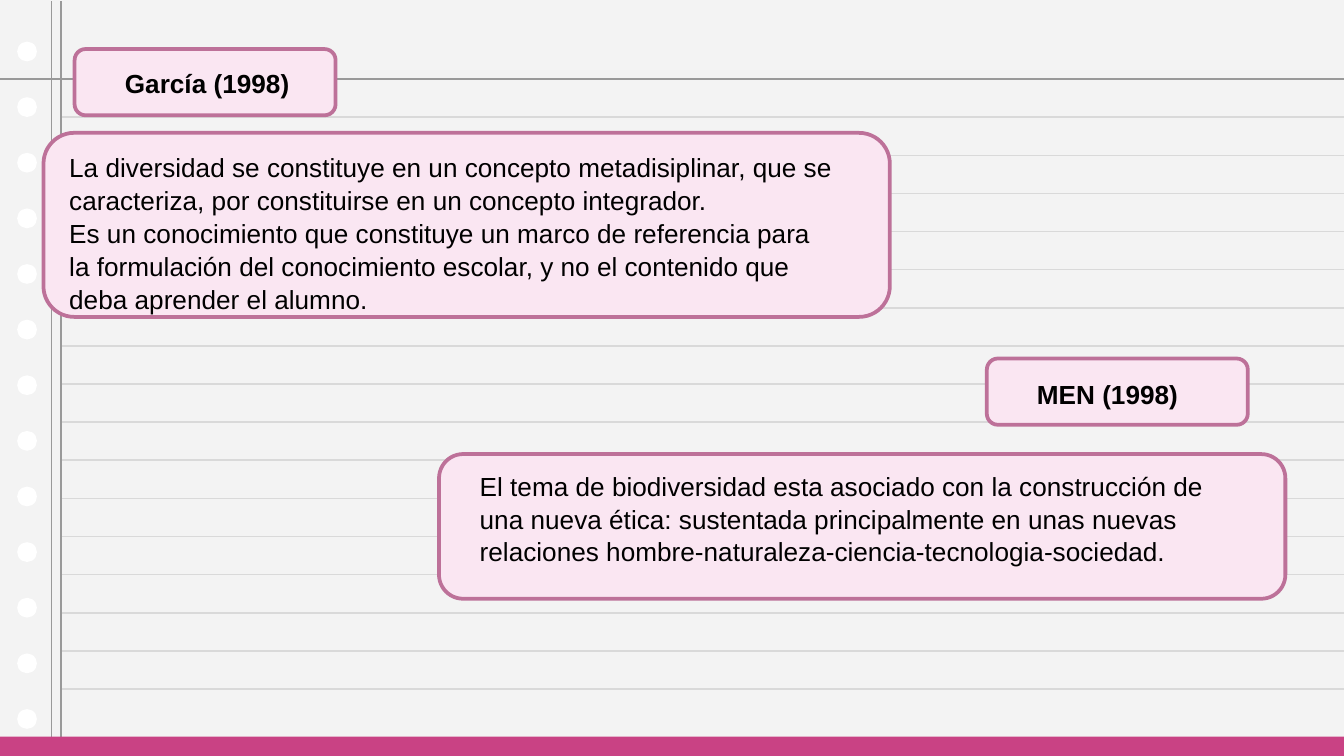
"""Build a notebook-style slide with two authors and their views on diversity."""
from dataclasses import dataclass

from lxml import etree
from pptx import Presentation
from pptx.dml.color import RGBColor
from pptx.enum.shapes import MSO_CONNECTOR, MSO_SHAPE
from pptx.oxml.ns import qn
from pptx.util import Pt

RECT = MSO_SHAPE.RECTANGLE
ROUND = MSO_SHAPE.ROUNDED_RECTANGLE
OVAL = MSO_SHAPE.OVAL
STRAIGHT = MSO_CONNECTOR.STRAIGHT

PAPER = RGBColor(0xF3, 0xF3, 0xF3)
WHITE = RGBColor(0xFF, 0xFF, 0xFF)
BLACK = RGBColor(0x00, 0x00, 0x00)
RULE = RGBColor(0xD9, 0xD9, 0xD9)
MARGIN = RGBColor(0x99, 0x99, 0x99)
BAR = RGBColor(0xC9, 0x42, 0x84)
BLUSH = RGBColor(0xFA, 0xE6, 0xF2)
MAUVE = RGBColor(0xBD, 0x71, 0x99)

WIDTH, HEIGHT = 720, 405
RULES, RULE_TOP, RULE_GAP = 16, 62.8, 20.42
HOLES, HOLE_TOP, HOLE_GAP, HOLE_SIZE = 13, 22.3, 29.8, 10.6
LEFT = 32.7


@dataclass
class Box:
    left: float
    top: float
    width: float
    height: float

    def points(self) -> tuple:
        return Pt(self.left), Pt(self.top), Pt(self.width), Pt(self.height)


@dataclass
class Note:
    card: Box
    area: Box
    lines: list[str]
    bold: bool = False


NOTES = [
    Note(Box(40, 26.3, 139.8, 35.5), Box(59.8, 31.8, 120, 24.2),
         ["García (1998)"], True),
    Note(Box(23.3, 71.2, 453.4, 98.6), Box(30, 77, 425.5, 108.5),
         ["La diversidad se constituye en un concepto metadisiplinar, que se "
          "caracteriza, por constituirse en un concepto integrador.",
          "Es un conocimiento que constituye un marco de referencia para la "
          "formulación del conocimiento escolar, y no el contenido que deba "
          "aprender el alumno."]),
    Note(Box(528.7, 192.1, 139.8, 35.5), Box(548.4, 198.5, 120, 24.2),
         ["MEN (1998)"], True),
    Note(Box(235.2, 243.3, 453.4, 77.5), Box(249.9, 247.4, 425.5, 58.2),
         ["El tema de biodiversidad esta asociado con la construcción de una "
          "nueva ética: sustentada principalmente en unas nuevas relaciones "
          "hombre-naturaleza-ciencia-tecnologia-sociedad."]),
]


def draw_shape(shapes, kind, box: Box, fill: RGBColor, edge: RGBColor | None = None) -> None:
    shape = shapes.add_shape(kind, *box.points())
    shape.shadow.inherit = False
    shape.fill.solid()
    shape.fill.fore_color.rgb = fill
    if edge is None:
        shape.line.fill.background()
    else:
        shape.line.color.rgb = edge
        shape.line.width = Pt(2)


def draw_line(shapes, x1: float, y1: float, x2: float, y2: float,
              color: RGBColor, width: float) -> None:
    line = shapes.add_connector(STRAIGHT, Pt(x1), Pt(y1), Pt(x2), Pt(y2))
    line.line.color.rgb = color
    line.line.width = Pt(width)
    etree.SubElement(line._element.spPr, qn("a:effectLst"))


def draw_paper(shapes) -> None:
    draw_shape(shapes, RECT, Box(0, 0, WIDTH, HEIGHT), PAPER)
    for i in range(HOLES):
        top = HOLE_TOP + i * HOLE_GAP
        draw_shape(shapes, OVAL, Box(9.2, top, HOLE_SIZE, HOLE_SIZE), WHITE)
    for i in range(RULES):
        y = RULE_TOP + i * RULE_GAP
        draw_line(shapes, LEFT, y, WIDTH, y, RULE, 0.86)
    for x in (27.7, LEFT):
        draw_line(shapes, x, 0.7, x, HEIGHT, MARGIN, 0.62)
    draw_line(shapes, -5, 42.4, 725, 42.4, MARGIN, 0.75)
    draw_shape(shapes, RECT, Box(-1.4, 394.6, 721.4, 12.2), BAR)


def draw_text(shapes, note: Note) -> None:
    frame = shapes.add_textbox(*note.area.points()).text_frame
    frame.word_wrap = True
    frame.text = "\n".join(note.lines)
    for para in frame.paragraphs:
        para.line_spacing = 1.05
        para.font.name = "Arial"
        para.font.size = Pt(14)
        para.font.bold = note.bold
        para.font.color.rgb = BLACK


def main() -> None:
    deck = Presentation()
    deck.slide_width, deck.slide_height = Pt(WIDTH), Pt(HEIGHT)
    shapes = deck.slides.add_slide(deck.slide_layouts[6]).shapes
    draw_paper(shapes)
    for note in NOTES:
        draw_shape(shapes, ROUND, note.card, BLUSH, MAUVE)
        draw_text(shapes, note)
    deck.save("out.pptx")


if __name__ == "__main__":
    main()
